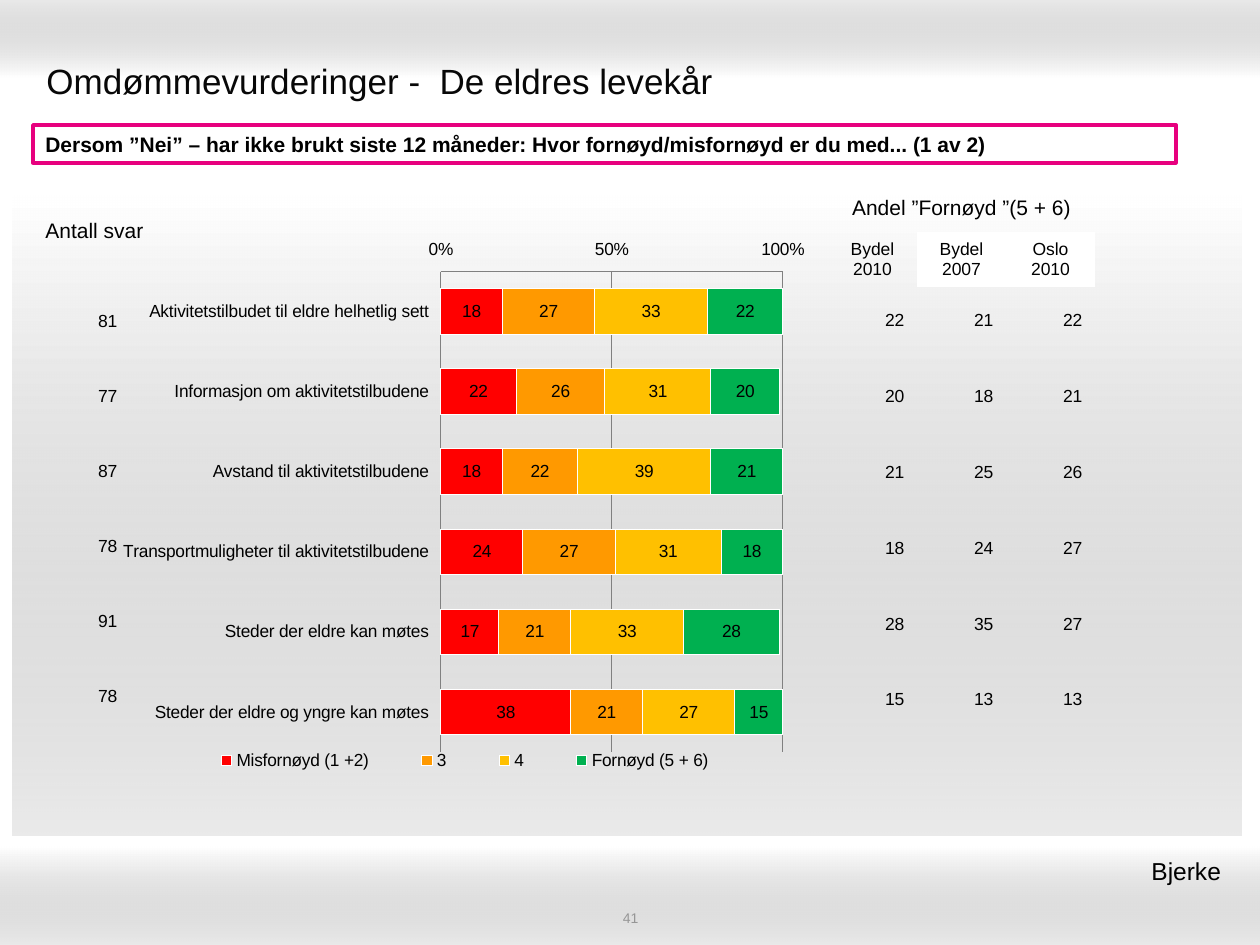
from dataclasses import dataclass

from lxml import etree
from pptx import Presentation
from pptx.chart.data import CategoryChartData
from pptx.dml.color import RGBColor
from pptx.enum.chart import XL_CHART_TYPE, XL_LEGEND_POSITION, XL_TICK_LABEL_POSITION, XL_TICK_MARK
from pptx.enum.shapes import MSO_SHAPE
from pptx.enum.text import MSO_ANCHOR, PP_ALIGN
from pptx.oxml import parse_xml
from pptx.oxml.ns import nsdecls, qn
from pptx.util import Emu, Pt

RECTANGLE = MSO_SHAPE.RECTANGLE
LEFT, CENTER, RIGHT = PP_ALIGN.LEFT, PP_ALIGN.CENTER, PP_ALIGN.RIGHT
TOP, MIDDLE = MSO_ANCHOR.TOP, MSO_ANCHOR.MIDDLE
BAR_STACKED = XL_CHART_TYPE.BAR_STACKED
LEGEND_BOTTOM = XL_LEGEND_POSITION.BOTTOM
LABELS_LOW = XL_TICK_LABEL_POSITION.LOW
TICK_NONE, TICK_INSIDE = XL_TICK_MARK.NONE, XL_TICK_MARK.INSIDE

PX_PER_INCH = 126
FONT = "Arial"
BLACK, WHITE, GREY, PINK = "000000", "FFFFFF", "808080", "E7007E"
PLAIN_TABLE_STYLE = "{2D5ABB26-0587-4C30-8999-92F81FD0307C}"


@dataclass
class Box:
    left: int
    top: int
    width: int
    height: int

    def emu(self) -> list[Emu]:
        return [px(n) for n in (self.left, self.top, self.width, self.height)]


@dataclass
class Band:
    box: Box
    angle: int


@dataclass
class Answer:
    name: str
    color: str
    shares: list[int]


@dataclass
class Label:
    box: Box
    text: str
    size: int
    color: str = BLACK
    align: PP_ALIGN = LEFT
    anchor: MSO_ANCHOR = MIDDLE
    right_margin: int = 12


BANDS = [
    Band(Box(0, 0, 1260, 78), 270),
    Band(Box(0, 847, 1260, 98), 90),
    Band(Box(13, 196, 1228, 640), 90),
]
LABELS = [
    Label(Box(34, 45, 1191, 70), "Omdømmevurderinger -  De eldres levekår", 20, "080808"),
    Label(Box(431, 909, 399, 18), "41", 8, "969696", CENTER),
    Label(Box(769, 850, 471, 43), "Bjerke", 14, align=RIGHT, anchor=TOP, right_margin=19),
]
QUESTION = ("Dersom ”Nei” – har ikke brukt siste 12 måneder: "
            "Hvor fornøyd/misfornøyd er du med... (1 av 2)")
SERVICES = [
    "Aktivitetstilbudet til eldre helhetlig sett",
    "Informasjon om aktivitetstilbudene",
    "Avstand til aktivitetstilbudene",
    "Transportmuligheter til aktivitetstilbudene",
    "Steder der eldre kan møtes",
    "Steder der eldre og yngre kan møtes",
]
ANSWERS = [
    Answer("Misfornøyd (1 +2)", "FF0000", [18, 22, 18, 24, 17, 38]),
    Answer("3", "FF9900", [27, 26, 22, 27, 21, 21]),
    Answer("4", "FFC000", [33, 31, 39, 31, 33, 27]),
    Answer("Fornøyd (5 + 6)", "00B050", [22, 20, 21, 18, 28, 15]),
]
RESPONSE_COUNTS = [[81], [77], [87], [78], [91], [78]]
SATISFIED = [[22, 21, 22], [20, 18, 21], [21, 25, 26], [18, 24, 27], [28, 35, 27], [15, 13, 13]]
SATISFIED_HEADER = [
    ["Andel ”Fornøyd ”(5 + 6)", "", ""],
    ["Bydel\n2010", "Bydel\n2007", "Oslo\n2010"],
]


def px(n: int) -> Emu:
    return Emu(round(n * 914400 / PX_PER_INCH))


def rgb(color: str) -> RGBColor:
    return RGBColor.from_string(color)


def style_font(font, size: int, color: str = BLACK, bold: bool = False) -> None:
    font.name, font.size, font.bold = FONT, Pt(size), bold
    font.color.rgb = rgb(color)


def write(frame, text: str, size: int, color: str, align: PP_ALIGN, bold: bool = False) -> None:
    frame.text = text
    for paragraph in frame.paragraphs:
        paragraph.alignment = align
        for run in paragraph.runs:
            style_font(run.font, size, color, bold)


def add_band(slide, band: Band) -> None:
    """Draw a rectangle that fades from white to translucent grey."""
    shape = slide.shapes.add_shape(RECTANGLE, *band.box.emu())
    shape.shadow.inherit = False
    shape.line.fill.background()
    gradient = parse_xml(
        f'<a:gradFill {nsdecls("a")} rotWithShape="1"><a:gsLst>'
        '<a:gs pos="0"><a:srgbClr val="FFFFFF"/></a:gs>'
        '<a:gs pos="100000"><a:srgbClr val="999999"><a:alpha val="20000"/></a:srgbClr></a:gs>'
        f'</a:gsLst><a:lin ang="{band.angle * 60000}" scaled="1"/></a:gradFill>')
    shape.element.spPr.find(qn("a:prstGeom")).addnext(gradient)


def add_label(slide, label: Label) -> None:
    frame = slide.shapes.add_textbox(*label.box.emu()).text_frame
    frame.word_wrap = True
    frame.vertical_anchor = label.anchor
    frame.margin_right = px(label.right_margin)
    write(frame, label.text, label.size, label.color, label.align)


def add_question(slide, box: Box) -> None:
    shape = slide.shapes.add_shape(RECTANGLE, *box.emu())
    shape.shadow.inherit = False
    shape.fill.solid()
    shape.fill.fore_color.rgb = rgb(WHITE)
    shape.line.color.rgb = rgb(PINK)
    shape.line.width = Pt(2)
    shape.text_frame.word_wrap = True
    write(shape.text_frame, QUESTION, 12, BLACK, LEFT, bold=True)


def add_grid(slide, left: int, top: int, col_width: int, row_heights: list[int],
             rows: list[list], align: PP_ALIGN, size: int = 10):
    box = Box(left, top, col_width * len(rows[0]), sum(row_heights))
    frame = slide.shapes.add_table(len(rows), len(rows[0]), *box.emu())
    table = frame.table
    table.first_row = table.horz_banding = False
    frame.element.find(".//" + qn("a:tableStyleId")).text = PLAIN_TABLE_STYLE
    for column in table.columns:
        column.width = px(col_width)
    for r, (height, values) in enumerate(zip(row_heights, rows)):
        table.rows[r].height = px(height)
        for c, value in enumerate(values):
            cell = table.cell(r, c)
            cell.fill.background()
            cell.vertical_anchor = MIDDLE
            write(cell.text_frame, str(value), size, BLACK, align)
    return table


def add_satisfied_header(slide, left: int, top: int, col_width: int) -> None:
    table = add_grid(slide, left, top, col_width, [47, 50], SATISFIED_HEADER, CENTER)
    table.cell(0, 0).merge(table.cell(0, 2))
    style_font(table.cell(0, 0).text_frame.paragraphs[0].runs[0].font, 12)
    for c in (1, 2):
        fill = table.cell(1, c).fill
        fill.solid()
        fill.fore_color.rgb = rgb(WHITE)


def set_layout(part, x: float, y: float, w: float, h: float, inner: bool = False) -> None:
    """Place a chart part by fractions of the chart area."""
    layout = part.get_or_add_layout() if hasattr(part, "get_or_add_layout") else part.find(qn("c:layout"))
    if layout is None:
        layout = parse_xml(f'<c:layout {nsdecls("c")}/>')
        part.insert(0, layout)
    for child in list(layout):
        layout.remove(child)
    manual = etree.SubElement(layout, qn("c:manualLayout"))
    settings = [("layoutTarget", "inner")] if inner else []
    settings += [("xMode", "edge"), ("yMode", "edge"), ("x", x), ("y", y), ("w", w), ("h", h)]
    for tag, value in settings:
        etree.SubElement(manual, qn(f"c:{tag}")).set("val", str(value))


def add_answers_chart(slide, box: Box) -> None:
    data = CategoryChartData()
    data.categories = SERVICES
    for answer in ANSWERS:
        data.add_series(answer.name, answer.shares)
    chart = slide.shapes.add_chart(BAR_STACKED, *box.emu(), data).chart
    style_font(chart.font, 10)
    chart.has_title = False

    plot = chart.plots[0]
    plot.gap_width, plot.overlap, plot.vary_by_categories = 75, 100, False
    for series, answer in zip(plot.series, ANSWERS):
        series.format.fill.solid()
        series.format.fill.fore_color.rgb = rgb(answer.color)
        series.format.line.color.rgb = rgb(WHITE)
        labels = series.data_labels
        labels.show_value = True
        labels.number_format, labels.number_format_is_linked = "0", False
        style_font(labels.font, 10)

    services, share = chart.category_axis, chart.value_axis
    services.reverse_order = True
    services.major_tick_mark = TICK_NONE
    share.minimum_scale, share.maximum_scale, share.major_unit = 0, 100, 50
    share.major_tick_mark = TICK_INSIDE
    share.tick_labels.number_format = "General\\%"
    share.tick_labels.number_format_is_linked = False
    share.major_gridlines.format.line.color.rgb = rgb(GREY)
    for axis in (services, share):
        axis.tick_label_position = LABELS_LOW
        axis.format.line.color.rgb = rgb(GREY)

    chart.has_legend = True
    chart.legend.position = LEGEND_BOTTOM
    chart.legend.include_in_layout = False
    plot_area = chart.element.find(".//" + qn("c:plotArea"))
    set_layout(plot_area, 0.45, 0.08, 0.5, 0.84, inner=True)
    set_layout(chart.element.find(".//" + qn("c:legend")), 0.06, 0.91, 0.85, 0.05)


def main() -> None:
    deck = Presentation()
    deck.slide_width, deck.slide_height = px(1260), px(945)
    slide = deck.slides.add_slide(deck.slide_layouts[6])
    for band in BANDS:
        add_band(slide, band)
    for label in LABELS:
        add_label(slide, label)
    add_question(slide, Box(33, 125, 1143, 38))
    add_answers_chart(slide, Box(123, 226, 694, 572))
    add_grid(slide, 828, 282, 89, [76] * 6, SATISFIED, RIGHT)
    add_satisfied_header(slide, 828, 185, 89)
    add_grid(slide, 64, 284, 66, [75] * 6, RESPONSE_COUNTS, RIGHT)
    add_grid(slide, 5, 194, 179, [75], [["Antall svar"]], CENTER, 12)
    deck.save("out.pptx")


if __name__ == "__main__":
    main()
